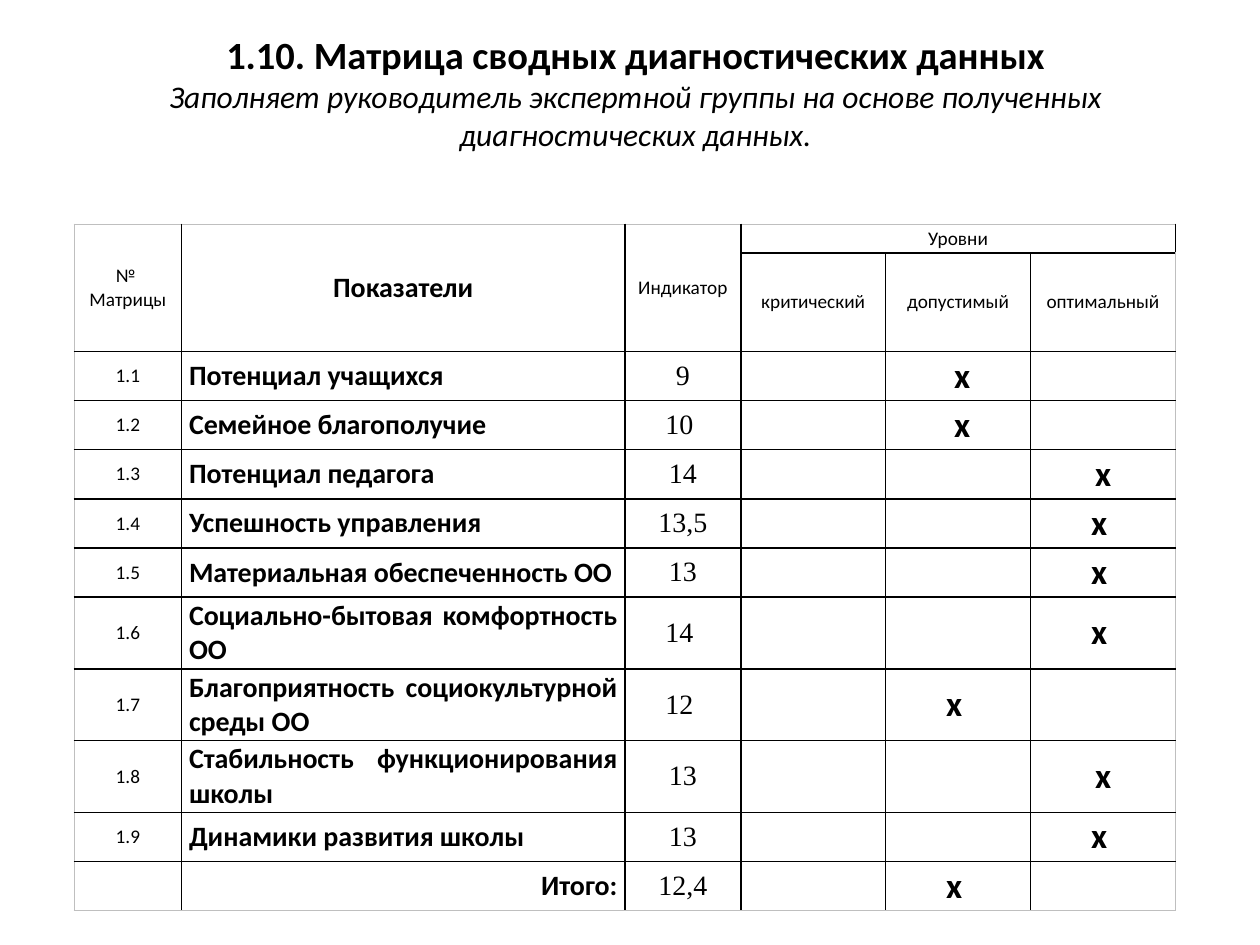
from dataclasses import dataclass

from lxml import etree
from pptx import Presentation
from pptx import util as u
from pptx.dml.color import RGBColor
from pptx.enum import text
from pptx.oxml.ns import qn


@dataclass(frozen=True)
class Theme:
    ink: str = "000000"
    paper: str = "FFFFFF"
    edge: str = "BFBFBF"
    sans: str = "Calibri"
    serif: str = "Times New Roman"
    head: int = 22
    sub: int = 18
    mark: int = 20
    body: int = 16
    small: int = 11
    rule: float = 1


T = Theme()
MID, LEFT, RIGHT, JUST = (text.PP_ALIGN.CENTER, text.PP_ALIGN.LEFT,
                          text.PP_ALIGN.RIGHT, text.PP_ALIGN.JUSTIFY)

COLS = [0.85, 3.52, 0.92, 1.15, 1.15, 1.15]
ROWS = [0.23, 0.78] + [0.39] * 5 + [0.57] * 3 + [0.39] * 2
LEVELS = ["критический", "допустимый", "оптимальный"]
# Name, indicator, level (index in LEVELS), mark
DATA = [
    ("Потенциал учащихся", "9", 1, " х"),
    ("Семейное благополучие", "10 ", 1, " х"),
    ("Потенциал педагога", "14", 2, "х"),
    ("Успешность управления", "13,5", 2, "х "),
    ("Материальная обеспеченность ОО", "13", 2, "х "),
    ("Социально-бытовая комфортность ОО", "14 ", 2, "х "),
    ("Благоприятность социокультурной среды ОО", "12 ", 1, "х "),
    ("Стабильность функционирования школы", "13", 2, "х"),
    ("Динамики развития школы", "13", 2, "х "),
    ("Итого:", "12,4", 1, "х "),
]


def style(run, size, bold=False, italic=False, face=T.sans):
    font = run.font
    font.size, font.bold, font.italic, font.name = u.Pt(size), bold, italic, face
    font.color.rgb = RGBColor.from_string(T.ink)


def size_gaps(par, size):
    """Give line breaks and the paragraph end the size of the text."""
    val = str(size * 100)
    for gap in par._p.findall(qn("a:br")):
        etree.SubElement(gap, qn("a:rPr")).set("sz", val)
    etree.SubElement(par._p, qn("a:endParaRPr")).set("sz", val)


def add_title(slide, x, y, w, h):
    title = slide.shapes.title
    title.left, title.top, title.width, title.height = map(u.Inches, (x, y, w, h))
    frame = title.text_frame
    frame.text = ("1.10. Матрица сводных диагностических данных\v"
                  "Заполняет руководитель экспертной группы на основе "
                  "полученных диагностических данных.\v")
    frame.word_wrap = True
    frame.auto_size = text.MSO_AUTO_SIZE.NONE
    frame.vertical_anchor = text.MSO_ANCHOR.MIDDLE
    par = frame.paragraphs[0]
    par.alignment = MID
    head, sub = par.runs
    style(head, T.head, bold=True)
    style(sub, T.sub, italic=True)
    size_gaps(par, T.sub)


def add_rule(cell, side, color):
    line = etree.SubElement(cell._tc.get_or_add_tcPr(), qn("a:ln" + side))
    line.set("w", str(u.Pt(T.rule)))
    fill = etree.SubElement(line, qn("a:solidFill"))
    etree.SubElement(fill, qn("a:srgbClr")).set("val", color)


def prep_cell(cell, row, col):
    """Set borders, fill and margins; the outer frame is lighter."""
    outer = {"L": col == 0, "R": col == len(COLS) - 1,
             "T": row == 0, "B": row == len(ROWS) - 1}
    for side, edge in outer.items():
        add_rule(cell, side, T.edge if edge else T.ink)
    cell.fill.solid()
    cell.fill.fore_color.rgb = RGBColor.from_string(T.paper)
    cell.margin_left = cell.margin_right = u.Inches(0.06)
    cell.margin_top = cell.margin_bottom = 0
    cell.vertical_anchor = text.MSO_ANCHOR.MIDDLE


def put(cell, words, size=T.small, bold=False, face=T.sans, align=MID):
    par = cell.text_frame.paragraphs[0]
    par.text = words
    par.alignment = align
    for run in par.runs:
        style(run, size, bold, face=face)


def fill_head(table):
    for col in range(3):
        table.cell(0, col).merge(table.cell(1, col))
    table.cell(0, 3).merge(table.cell(0, 5))
    put(table.cell(0, 0), "№ \vМатрицы")
    put(table.cell(0, 1), "Показатели", T.body, True)
    put(table.cell(0, 2), "Индикатор")
    put(table.cell(0, 3), "Уровни")
    for col, level in enumerate(LEVELS, 3):
        put(table.cell(1, col), level)


def fill_body(table):
    for num, (name, value, level, mark) in enumerate(DATA, 1):
        row, total = num + 1, num == len(DATA)
        if not total:
            put(table.cell(row, 0), f"1.{num}")
        put(table.cell(row, 1), name, T.body, True,
            align=RIGHT if total else JUST)
        put(table.cell(row, 2), value, T.body, face=T.serif)
        put(table.cell(row, 3 + level), mark, T.mark, True)


def add_matrix(slide, x, y, w, h):
    box = map(u.Inches, (x, y, w, h))
    table = slide.shapes.add_table(len(ROWS), len(COLS), *box).table
    table.first_row = table.horz_banding = False
    for col, width in zip(table.columns, COLS):
        col.width = u.Inches(width)
    for row, height in zip(table.rows, ROWS):
        row.height = u.Inches(height)
    fill_head(table)
    fill_body(table)
    for r in range(len(ROWS)):
        for c in range(len(COLS)):
            cell = table.cell(r, c)
            prep_cell(cell, r, c)
            size_gaps(cell.text_frame.paragraphs[0], T.small)


def main():
    deck = Presentation()
    deck.slide_width, deck.slide_height = u.Inches(10), u.Inches(7.5)
    slide = deck.slides.add_slide(deck.slide_layouts[5])
    add_title(slide, 0.28, 0.13, 9.53, 1.5)
    add_matrix(slide, 0.59, 1.78, 8.74, 5.43)
    deck.save("out.pptx")


if __name__ == "__main__":
    main()
